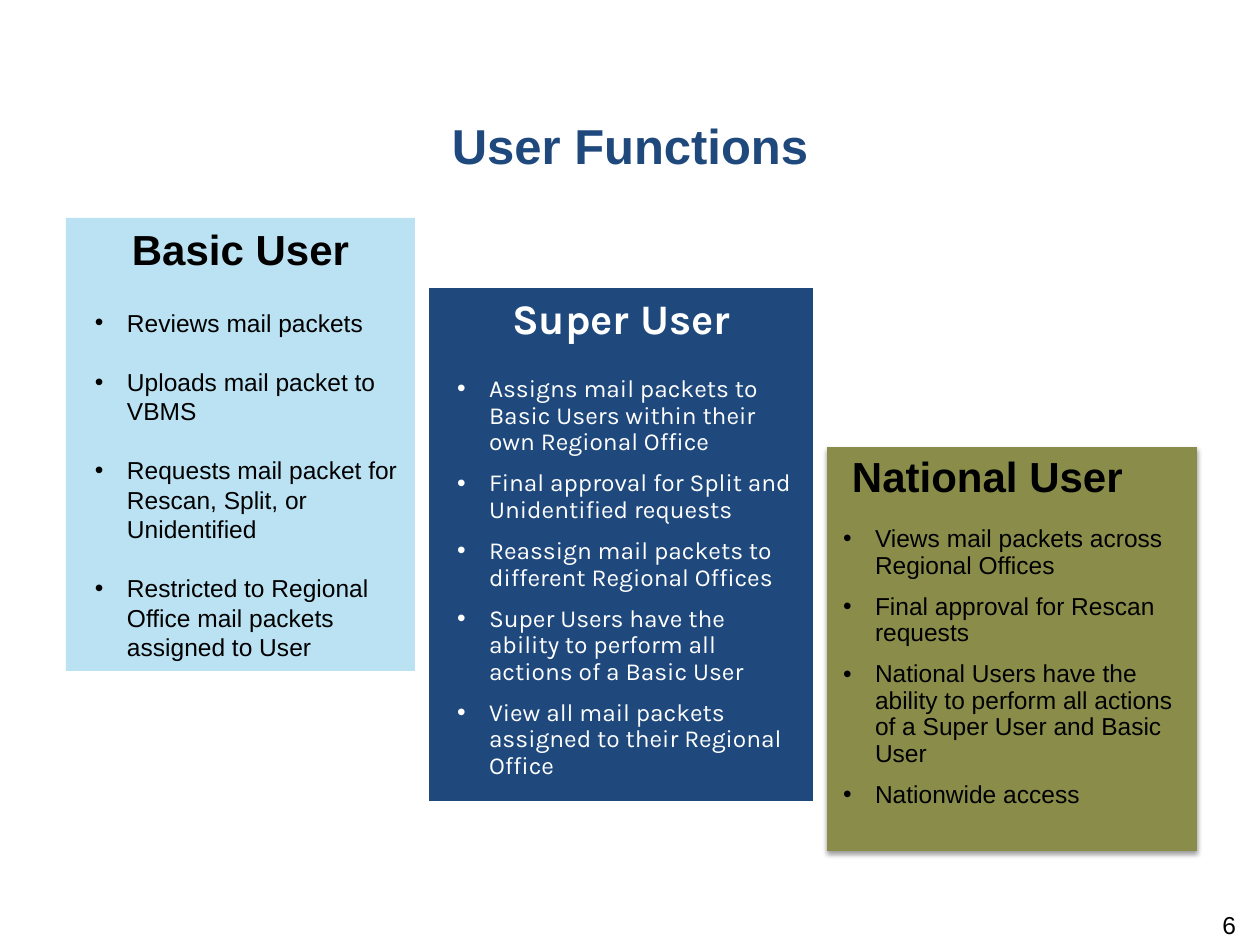
from lxml import etree
from pptx import Presentation
from pptx import util as u
from pptx.dml.color import RGBColor
from pptx.enum import shapes, text
from pptx.oxml import parse_xml
from pptx.oxml.ns import nsdecls, qn

PX_PER_INCH = 126
COLORS = {"navy": "1F497D", "sky": "BBE2F2", "olive": "8A8D4A",
          "black": "000000", "white": "FFFFFF"}

# Each card: position in px, look, heading and list
CARDS = [
    {"at": (66, 218, 349, 453), "fill": "sky", "ink": "black", "font": "Arial",
     "heading": "Basic User", "heading_after": 19, "item_after": 17, "spacing": 1.0,
     "items": ["Reviews mail packets",
               "Uploads mail packet to VBMS",
               "Requests mail packet for Rescan, Split, or Unidentified",
               "Restricted to Regional Office mail packets assigned to User"]},
    {"at": (428, 287, 386, 515), "fill": "navy", "ink": "white", "font": "Karla",
     "line": "white",
     "heading": "Super User", "heading_after": 19, "item_after": 8.4, "spacing": 0.9,
     "items": ["Assigns mail packets to Basic Users within their own Regional Office",
               "Final approval for Split and Unidentified requests",
               "Reassign mail packets to different Regional Offices",
               "Super Users have the ability to perform all actions of a Basic User",
               "View all mail packets assigned to their Regional Office"]},
    {"at": (827, 447, 370, 404), "fill": "olive", "ink": "black", "font": "Arial",
     "shape": shapes.MSO_SHAPE.FLOWCHART_PROCESS, "shadow": True,
     "insets": (0, 9, 0, 6), "heading_indent": 25, "heading_spacing": 0.9,
     "heading": "National User", "heading_after": 14.4, "item_after": 8.4, "spacing": 0.9,
     "items": ["Views mail packets across Regional Offices",
               "Final approval for Rescan requests",
               "National Users have the ability to perform all actions of a "
               "Super User and Basic User",
               "Nationwide access"]},
]


def px(length):
    return u.Emu(round(length * u.Inches(1) / PX_PER_INCH))


def color(name):
    return RGBColor.from_string(COLORS[name])


def place(box, at):
    box.left, box.top, box.width, box.height = (px(length) for length in at)


def set_frame(frame, insets=(13, 6, 13, 6)):
    frame.word_wrap = True
    frame.auto_size = text.MSO_AUTO_SIZE.NONE
    frame.vertical_anchor = text.MSO_ANCHOR.TOP
    (frame.margin_left, frame.margin_top,
     frame.margin_right, frame.margin_bottom) = (px(inset) for inset in insets)


def add_span(para, words, size, ink, font="Arial", bold=False):
    span = para.add_run()
    span.text = words
    span.font.name = font
    span.font.size = u.Pt(size)
    span.font.bold = bold
    span.font.color.rgb = color(ink)


def set_indent(para, left, first=0):
    properties = para._p.get_or_add_pPr()
    properties.set("marL", str(px(left)))
    properties.set("indent", str(px(first)))
    return properties


def add_bullet(para, ink):
    properties = set_indent(para, 48, -32)
    tint = etree.SubElement(properties, qn("a:buClr"))
    etree.SubElement(tint, qn("a:srgbClr"), val=COLORS[ink])
    etree.SubElement(properties, qn("a:buFont"), typeface="Arial")
    etree.SubElement(properties, qn("a:buChar"), char="•")


def add_shadow(box):
    box._element.spPr.append(parse_xml(
        f'<a:effectLst {nsdecls("a")}>'
        f'<a:outerShdw blurRad="{u.Pt(3.1)}" dist="{u.Pt(1.6)}" dir="5400000" rotWithShape="0">'
        f'<a:srgbClr val="{COLORS["black"]}"><a:alpha val="38000"/></a:srgbClr>'
        '</a:outerShdw></a:effectLst>'))


def add_title(page, words):
    title = page.shapes.title
    place(title, (0, 110, 1260, 150))
    set_frame(title.text_frame)
    para = title.text_frame.paragraphs[0]
    para.alignment = text.PP_ALIGN.CENTER
    add_span(para, words, 28, "navy", bold=True)


def add_card(page, card):
    box = page.shapes.add_shape(card.get("shape", shapes.MSO_SHAPE.RECTANGLE),
                                *(px(length) for length in card["at"]))
    box.fill.solid()
    box.fill.fore_color.rgb = color(card["fill"])
    if "line" in card:
        box.line.color.rgb = color(card["line"])
        box.line.width = u.Pt(0.75)
    else:
        box.line.fill.background()
    if card.get("shadow"):
        add_shadow(box)
    else:
        box.shadow.inherit = False

    frame = box.text_frame
    set_frame(frame, card.get("insets", (13, 6, 13, 6)))

    # Heading
    para = frame.paragraphs[0]
    if "heading_indent" in card:
        para.alignment = text.PP_ALIGN.LEFT
        set_indent(para, card["heading_indent"])
    else:
        para.alignment = text.PP_ALIGN.CENTER
    para.line_spacing = card.get("heading_spacing", 1.0)
    para.space_after = u.Pt(card["heading_after"])
    add_span(para, card["heading"], 24, card["ink"], card["font"], bold=True)

    # Bulleted functions
    for item in card["items"]:
        para = frame.add_paragraph()
        add_bullet(para, card["ink"])
        para.alignment = text.PP_ALIGN.LEFT
        para.line_spacing = card["spacing"]
        para.space_after = u.Pt(card["item_after"])
        add_span(para, item, 14, card["ink"], card["font"])


def add_page_number(page, number):
    box = page.shapes.add_textbox(*(px(length) for length in (955, 910, 294, 35)))
    set_frame(box.text_frame, (13, 0, 13, 0))
    para = box.text_frame.paragraphs[0]
    para.alignment = text.PP_ALIGN.RIGHT
    add_span(para, number, 14, "black")


def main():
    deck = Presentation()
    deck.slide_width, deck.slide_height = px(1260), px(945)
    page = deck.slides.add_slide(deck.slide_layouts[5])
    add_title(page, "User Functions")
    for card in CARDS:
        add_card(page, card)
    add_page_number(page, "6")
    deck.save("out.pptx")


if __name__ == "__main__":
    main()
